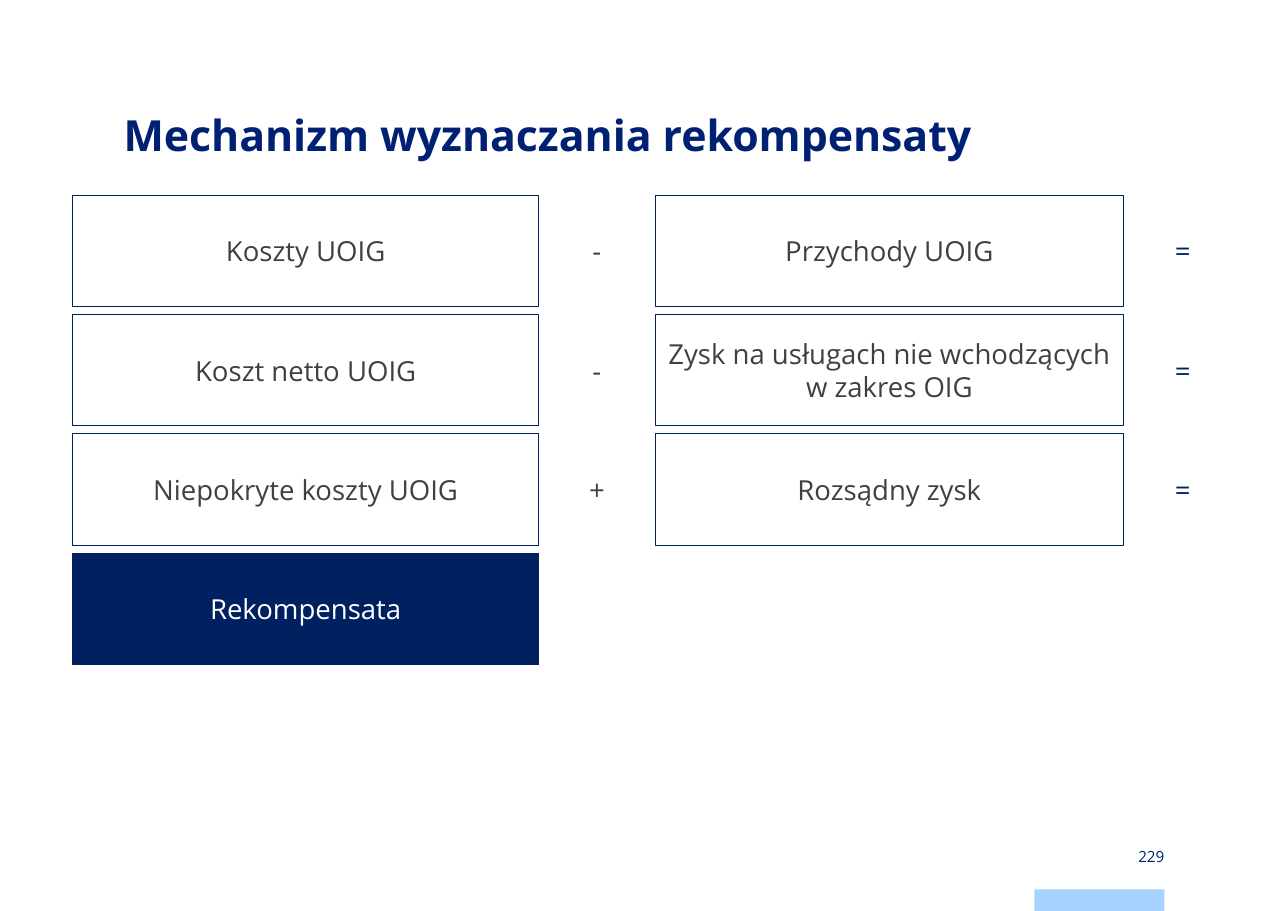
import pptx
import pptx.util
import pptx.dml.color
import pptx.enum.shapes
import pptx.enum.text

Cm = pptx.util.Cm
Align = pptx.enum.text.PP_ALIGN
Anchor = pptx.enum.text.MSO_ANCHOR

COLORS = {
    "title": "002073",
    "navy": "002060",
    "text": "404040",
    "white": "FFFFFF",
    "accent": "A6D3FF",
}


class Deck:
    font = "Open Sans"

    def __init__(self, slide):
        self.slide = slide

    def color(self, name):
        return pptx.dml.color.RGBColor.from_string(COLORS[name])

    def fill_text(self, shape, text, size, color, align, anchor, bold=False):
        frame = shape.text_frame
        frame.word_wrap = True
        frame.vertical_anchor = anchor
        frame.text = text
        par = frame.paragraphs[0]
        par.alignment = align
        font = par.runs[0].font
        font.name = self.font
        font.size = pptx.util.Pt(size)
        font.bold = bold
        font.color.rgb = self.color(color)

    def rect(self, left, top, width, height, fill=None, line=None):
        shape = self.slide.shapes.add_shape(
            pptx.enum.shapes.MSO_SHAPE.RECTANGLE,
            Cm(left), Cm(top), Cm(width), Cm(height))
        shape.shadow.inherit = False
        if fill:
            shape.fill.solid()
            shape.fill.fore_color.rgb = self.color(fill)
        else:
            shape.fill.background()
        if line:
            shape.line.color.rgb = self.color(line)
            shape.line.width = pptx.util.Pt(0.75)
        else:
            shape.line.fill.background()
        return shape

    def box(self, text, left, top, width, height, color="text", fill=None):
        """Outlined rectangle with a centred term of the formula."""
        shape = self.rect(left, top, width, height, fill, "navy")
        self.fill_text(shape, text, 18, color, Align.CENTER, Anchor.MIDDLE)

    def label(self, text, left, top, width, height, size=18, color="text",
              align=Align.CENTER, anchor=Anchor.MIDDLE, bold=False):
        """Borderless text without margins."""
        shape = self.slide.shapes.add_textbox(
            Cm(left), Cm(top), Cm(width), Cm(height))
        frame = shape.text_frame
        frame.margin_left = frame.margin_right = 0
        frame.margin_top = frame.margin_bottom = 0
        self.fill_text(shape, text, size, color, align, anchor, bold)


ROWS = [
    ("Koszty UOIG", "-", "Przychody UOIG"),
    ("Koszt netto UOIG", "-", "Zysk na usługach nie wchodzących w zakres OIG"),
    ("Niepokryte koszty UOIG", "+", "Rozsądny zysk"),
]
TOP, STEP, HEIGHT = 4.5, 2.75, 2.57
LEFT, WIDTH = 1.68, 10.74
RIGHT, WIDE = 15.11, 10.8
SIGN, EQUAL, NARROW = 13.03, 26.54, 1.47


def main():
    prs = pptx.Presentation()
    prs.slide_width, prs.slide_height = Cm(29.7), Cm(21)
    deck = Deck(prs.slides.add_slide(prs.slide_layouts[6]))

    deck.rect(23.85, 20.5, 3, 0.5, "accent")
    deck.label("Mechanizm wyznaczania rekompensaty", 2.85, 2.5, 24, 3, 28,
               "title", Align.LEFT, Anchor.TOP, True)

    for i, (cost, sign, term) in enumerate(ROWS):
        top = TOP + i * STEP
        deck.box(cost, LEFT, top, WIDTH, HEIGHT)
        deck.label(sign, SIGN, top, NARROW, HEIGHT)
        deck.box(term, RIGHT, top, WIDE, HEIGHT)
        deck.label("=", EQUAL, top, NARROW, HEIGHT, color="navy")

    deck.box("Rekompensata", LEFT, TOP + len(ROWS) * STEP, WIDTH, HEIGHT,
             "white", "navy")
    deck.label("229", 23.85, 19.5, 3, 0.5, 10, "title", Align.RIGHT)

    prs.save("out.pptx")


if __name__ == "__main__":
    main()
